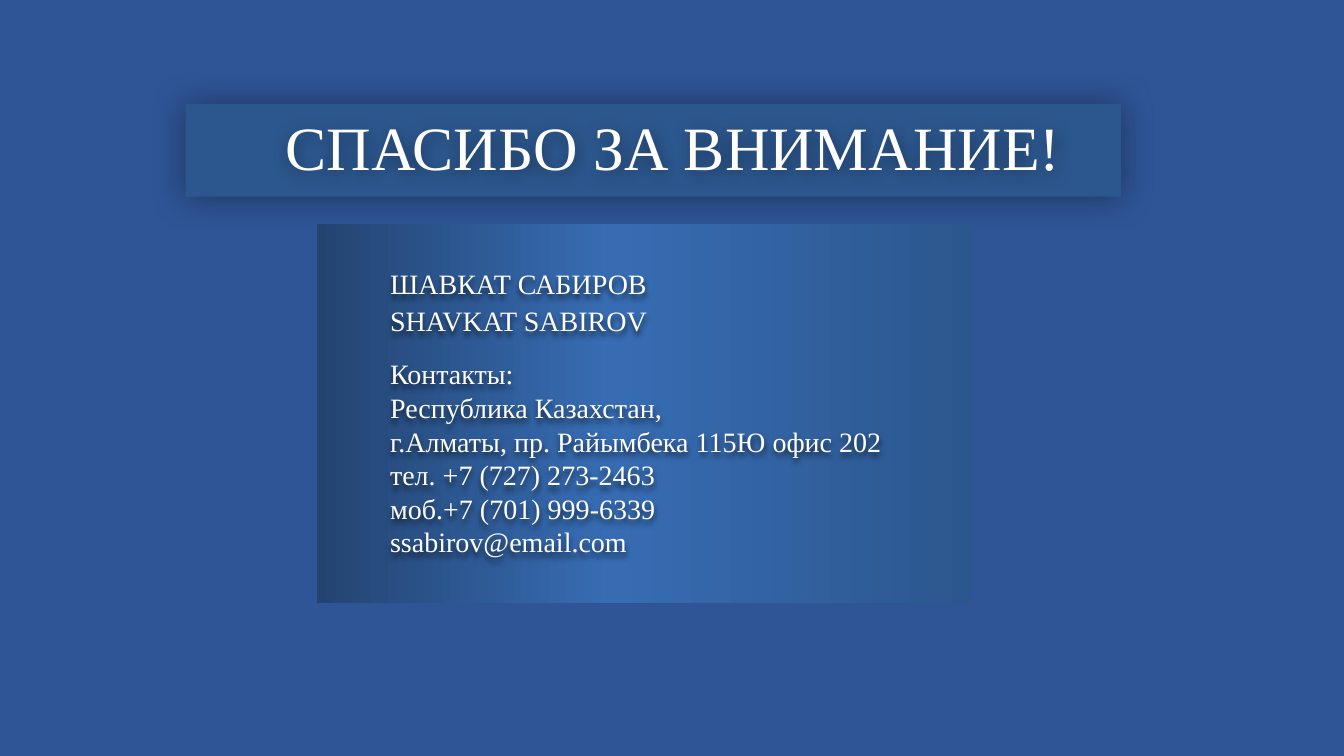
from copy import deepcopy

from lxml.etree import SubElement
from pptx import Presentation
from pptx.dml.color import RGBColor
from pptx.enum.shapes import MSO_SHAPE
from pptx.enum.text import MSO_ANCHOR, PP_ALIGN
from pptx.oxml.ns import qn
from pptx.util import Inches, Pt

COLORS = {
    "background": "2F5597",
    "banner": "2C578E",
    "card_dark": "234471",
    "card_light": "376CB3",
    "text": "FFFFFF",
    "shadow": "000000",
}
FONT = "Times New Roman"
NAMES = ["ШАВКАТ САБИРОВ", "SHAVKAT SABIROV"]
CONTACTS = [
    "Контакты:",
    "Республика Казахстан,",
    "г.Алматы, пр. Райымбека 115Ю офис 202",
    "тел. +7 (727) 273-2463",
    "моб.+7 (701) 999-6339",
    "ssabirov@email.com",
]


def color(name):
    return RGBColor.from_string(COLORS[name])


def add_shadow(sp, blur, dist, angle, alpha):
    """Outer shadow: blur and distance in points, angle in degrees, alpha in percent."""
    sp.shadow.inherit = False
    effects = sp._element.spPr.find(qn("a:effectLst"))
    outer = SubElement(effects, qn("a:outerShdw"), blurRad=str(Pt(blur)),
                       dist=str(Pt(dist)), dir=str(angle * 60000),
                       algn="ctr", rotWithShape="0")
    clr = SubElement(outer, qn("a:srgbClr"), val=COLORS["shadow"])
    SubElement(clr, qn("a:alpha"), val=str(alpha * 1000))


def add_panel(s, x, y, w, h):
    sp = s.shapes.add_shape(MSO_SHAPE.RECTANGLE, Inches(x), Inches(y), Inches(w), Inches(h))
    sp.shadow.inherit = False
    sp.line.fill.background()
    return sp


def add_text(s, x, y, w, h, lines, size, spacing=None):
    sp = s.shapes.add_textbox(Inches(x), Inches(y), Inches(w), Inches(h))
    tf = sp.text_frame
    tf.word_wrap = True
    tf.text = "\n".join(lines)
    for p in tf.paragraphs:
        p.line_spacing = spacing
        font = p.runs[0].font
        font.name, font.size = FONT, Pt(size)
        font.color.rgb = color("text")
    return sp


def add_banner(s, x, y, w, h):
    # Glowing bar
    sp = add_panel(s, x, y, w, h)
    sp.fill.solid()
    sp.fill.fore_color.rgb = color("banner")
    add_shadow(sp, 24, 0, 0, 40)

    # Title, slightly right of the bar's centre
    title = add_text(s, x + 0.2, y, w, h, ["СПАСИБО ЗА ВНИМАНИЕ!"], 44, 0.9)
    title.text_frame.vertical_anchor = MSO_ANCHOR.MIDDLE
    title.text_frame.paragraphs[0].alignment = PP_ALIGN.CENTER
    add_shadow(title, 12, 2, 90, 40)


def add_contact_card(s, x, y, w, h):
    # Three-stop gradient panel
    sp = add_panel(s, x, y, w, h)
    sp.fill.gradient()
    sp.fill.gradient_angle = 0
    stop_list = sp._element.spPr.find(qn("a:gradFill")).find(qn("a:gsLst"))
    stop_list.append(deepcopy(stop_list[0]))
    stops = [(0, "card_dark"), (0.45, "card_light"), (1, "banner")]
    for stop, (position, name) in zip(sp.fill.gradient_stops, stops):
        stop.position = position
        stop.color.rgb = color(name)

    # Names, then contact lines
    left = x + 0.63
    texts = [add_text(s, left, y + 0.41 + 0.37 * i, 3.37, 0.52, [name], 20, 0.9)
             for i, name in enumerate(NAMES)]
    texts.append(add_text(s, left, y + 1.27, w - 0.64, h - 1.27, CONTACTS, 20))
    for text in texts:
        add_shadow(text, 4, 3, 90, 60)


def main():
    prs = Presentation()
    prs.slide_width, prs.slide_height = Inches(13.33), Inches(7.5)
    s = prs.slides.add_slide(prs.slide_layouts[6])
    s.background.fill.solid()
    s.background.fill.fore_color.rgb = color("background")
    add_banner(s, 1.84, 1.03, 9.28, 0.92)
    add_contact_card(s, 3.14, 2.22, 6.49, 3.76)
    prs.save("out.pptx")


if __name__ == "__main__":
    main()
